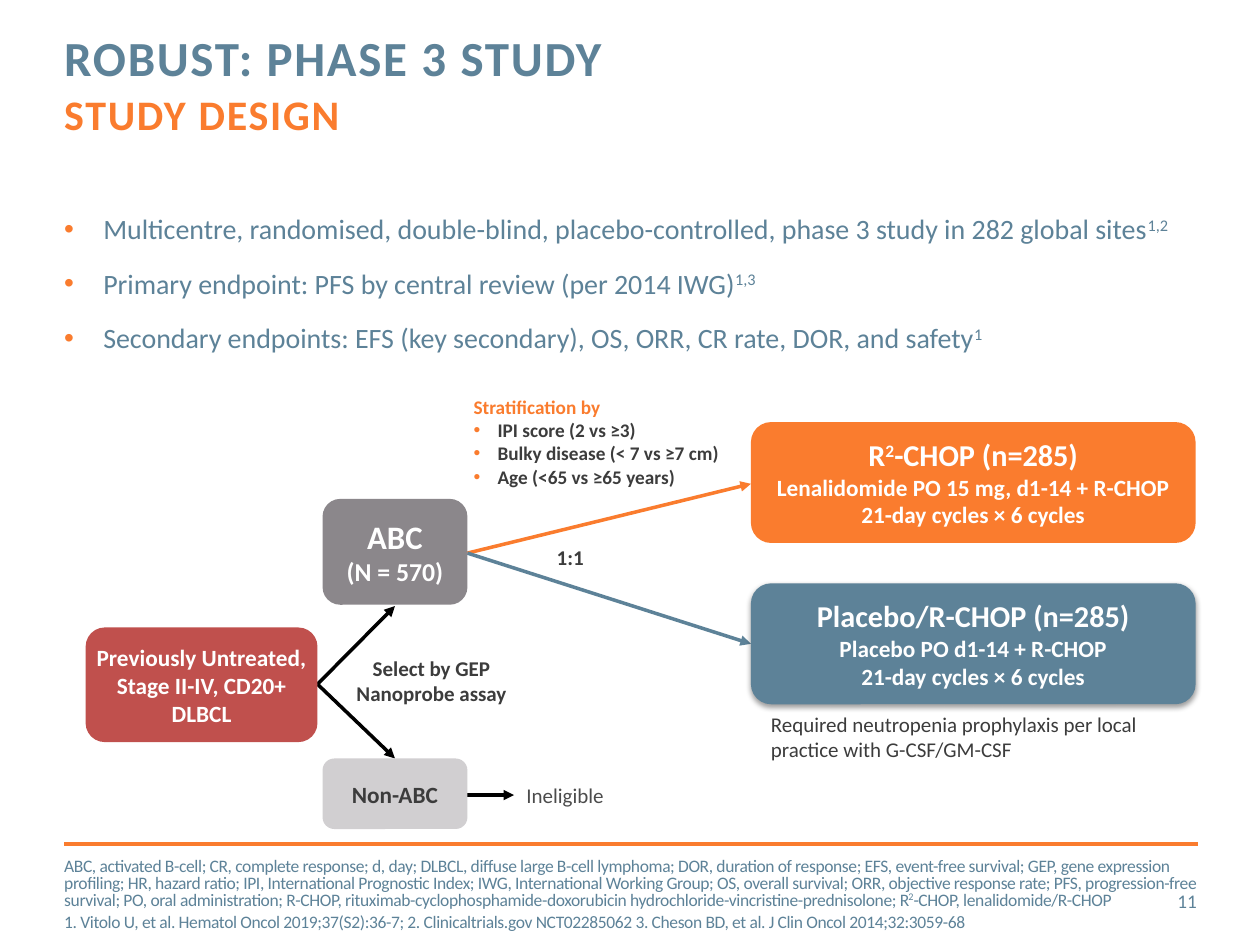
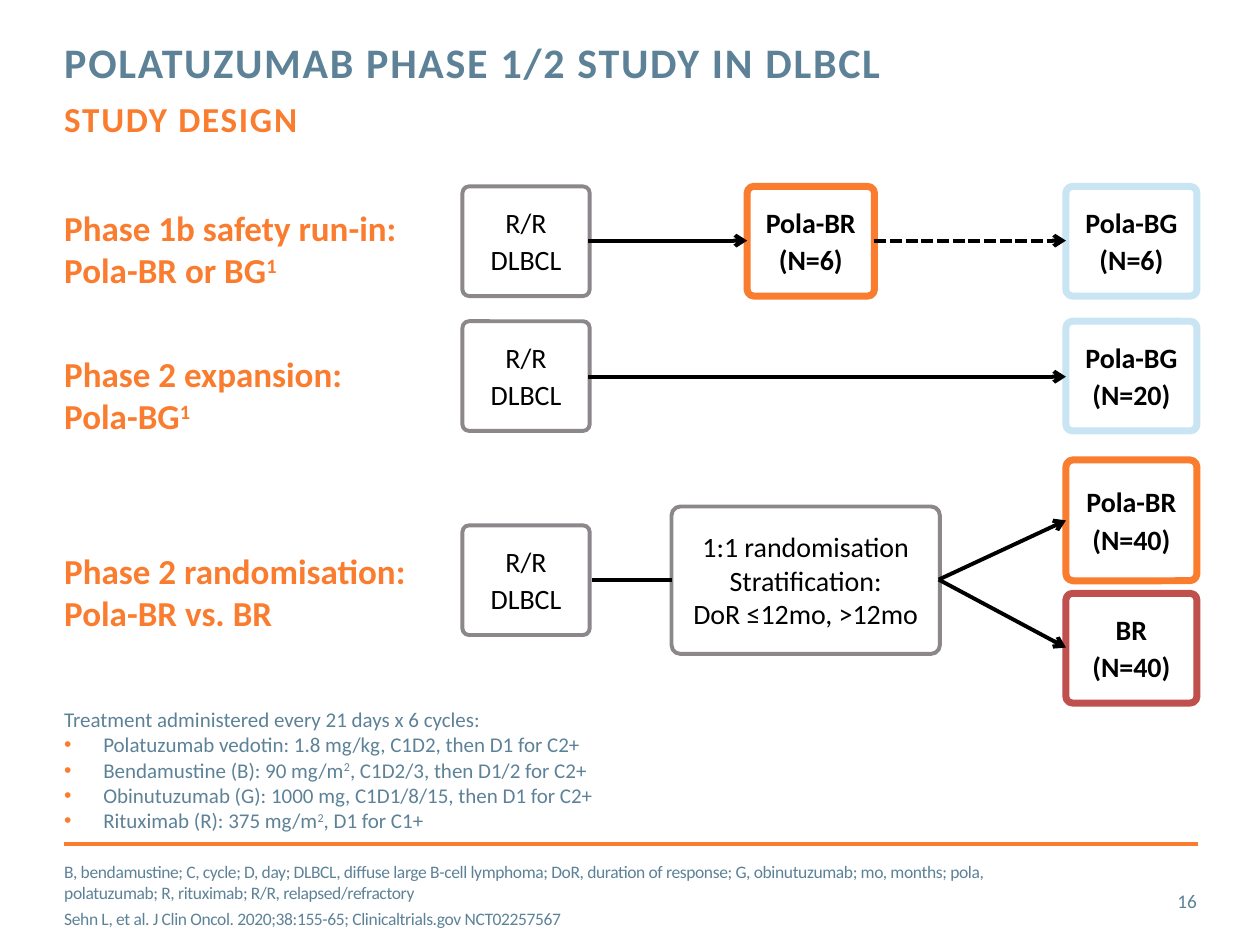
from lxml import etree
from pptx import Presentation
from pptx import util as u
from pptx.dml.color import RGBColor
from pptx.enum import dml, shapes, text
from pptx.oxml.ns import qn

HUE = {"blue": "5D8298", "orange": "FA7C2E", "red": "C0504D", "grey": "8B878B",
       "pale": "D1CFD1", "sky": "C9E5F3", "dark": "3C3C3C", "mid": "4C4C4C",
       "white": "FFFFFF", "black": "000000"}
LEFT, MID, RIGHT = text.PP_ALIGN.LEFT, text.PP_ALIGN.CENTER, text.PP_ALIGN.RIGHT
TOP, HALF = text.MSO_ANCHOR.TOP, text.MSO_ANCHOR.MIDDLE
EDGE, END = 0.51, 9.5      # left and right margins
WIDE = END - EDGE
INSET = (0.1, 0.05, 0.1, 0.05)
NONE = (0, 0, 0, 0)


def put(page, at, paras, size, hue, bold=False, align=LEFT, anchor=TOP, ins=INSET,
        wrap=True, before=0, lead=None, track=0, indent=0, fill=None, edge=None,
        thick=4, bend=None, title=False):
    """Place text; a paragraph is a string or (string, size, hue, bullet), ^ marks superscript."""
    at = [u.Inches(n) for n in at]
    if title:
        box = page.shapes.title
        box.left, box.top, box.width, box.height = at
    elif bend:
        box = page.shapes.add_shape(shapes.MSO_SHAPE.ROUNDED_RECTANGLE, *at)
        box.adjustments[0] = bend
        box.shadow.inherit = False
        box.fill.solid()
        box.fill.fore_color.rgb = RGBColor.from_string(HUE[fill])
        if edge:
            box.line.color.rgb = RGBColor.from_string(HUE[edge])
            box.line.width = u.Pt(thick)
        else:
            box.line.fill.background()
    else:
        box = page.shapes.add_textbox(*at)
    frame = box.text_frame
    frame.auto_size = text.MSO_AUTO_SIZE.NONE
    frame.word_wrap, frame.vertical_anchor = wrap, anchor
    (frame.margin_left, frame.margin_top,
     frame.margin_right, frame.margin_bottom) = [u.Inches(n) for n in ins]
    for i, item in enumerate(paras):
        words, pt, tint, dot = item if isinstance(item, tuple) else (item, size, hue, indent > 0)
        para = frame.add_paragraph() if i else frame.paragraphs[0]
        para.alignment = align
        if i and before:
            para.space_before = u.Pt(before)
        if lead:
            para.line_spacing = lead
        if dot:
            props = para._p.get_or_add_pPr()
            props.set("marL", str(u.Inches(indent)))
            props.set("indent", str(-u.Inches(indent)))
            tone = etree.SubElement(props, qn("a:buClr"))
            etree.SubElement(tone, qn("a:srgbClr"), val=HUE["orange"])
            etree.SubElement(props, qn("a:buFont"), typeface="Arial")
            etree.SubElement(props, qn("a:buChar"), char="•")
        font = para.font
        font.name, font.size, font.bold = "Calibri", u.Pt(pt), bold
        font.color.rgb = RGBColor.from_string(HUE[tint])
        if track:
            font._element.set("spc", str(int(track * 100)))
        for j, part in enumerate(words.split("^")):
            for k, line in enumerate(part.split("\n")):
                if k:
                    para.add_line_break()
                run = para.add_run()
                run.text = line
                if j % 2:
                    run._r.get_or_add_rPr().set("baseline", "30000")
    return box


def link(page, start, end, hue="black", thick=2.0, head=None):
    line = page.shapes.add_connector(shapes.MSO_CONNECTOR.STRAIGHT,
                                     *[u.Inches(n) for n in (*start, *end)])
    line.line.color.rgb = RGBColor.from_string(HUE[hue])
    line.line.width = u.Pt(thick)
    if head:
        etree.SubElement(line.line._get_or_add_ln(), qn("a:tailEnd"), type=head)
    etree.SubElement(line._element.spPr, qn("a:effectLst"))
    return line


deck = Presentation()
deck.slide_width, deck.slide_height = u.Inches(10), u.Inches(7.5)

# Shared frame: title, rule, slide number, references
heads = [
    ("ROBUST: PHASE 3 STUDY", 28, "11", WIDE, 0.8, [
        "ABC, activated B-cell; CR, complete response; d, day; DLBCL, diffuse large B-cell "
        "lymphoma; DOR, duration of response; EFS, event-free survival; GEP, gene expression "
        "profiling; HR, hazard ratio; IPI, International Prognostic Index; IWG, International "
        "Working Group; OS, overall survival; ORR, objective response rate; PFS, "
        "progression-free survival; PO, oral administration; R-CHOP, "
        "rituximab-cyclophosphamide-doxorubicin hydrochloride-vincristine-prednisolone; "
        "R^2^-CHOP, lenalidomide/R-CHOP",
        "1. Vitolo U, et al. Hematol Oncol 2019;37(S2):36-7; 2. Clinicaltrials.gov "
        "NCT02285062 3. Cheson BD, et al. J Clin Oncol 2014;32:3059-68"]),
    ("POLATUZUMAB PHASE 1/2 STUDY IN DLBCL", 24, "16", 7.68, None, [
        "B, bendamustine; C, cycle; D, day; DLBCL, diffuse large B-cell lymphoma; DoR, "
        "duration of response; G, obinutuzumab; mo, months; pola, polatuzumab; R, rituximab; "
        "R/R, relapsed/refractory",
        "Sehn L, et al. J Clin Oncol. 2020;38:155-65; Clinicaltrials.gov NCT02257567"]),
]
pages = []
for name, size, num, wide, lead, refs in heads:
    page = deck.slides.add_slide(deck.slide_layouts[5])
    pages.append(page)
    put(page, (EDGE, 0.27, WIDE, 0.88),
        [(name, size, "blue", False), ("STUDY DESIGN", size - 4, "orange", False)],
        size, "blue", bold=True, ins=NONE, lead=u.Pt(30), track=1, title=True)
    link(page, (EDGE, 6.7), (9.51, 6.7), "orange")
    put(page, (8.86, 6.95, 0.64, 0.4), [num], 11, "blue", align=RIGHT, anchor=HALF, ins=NONE)
    put(page, (EDGE, 6.8, wide, 0.61), refs, 10, "blue", anchor=HALF, ins=NONE,
        before=3, lead=lead, track=-0.2)
trial, pola = pages

# Slide 1: key facts
put(trial, (EDGE, 1.68, WIDE, 1.22), [
    "Multicentre, randomised, double-blind, placebo-controlled, phase 3 study in 282 "
    "global sites^1,2^",
    "Primary endpoint: PFS by central review (per 2014 IWG)^1,3^",
    "Secondary endpoints: EFS (key secondary), OS, ORR, CR rate, DOR, and safety^1^"],
    16, "blue", ins=NONE, before=12, indent=0.31)

# Slide 1: columns of the flow, then its arrows
pool, poolend, cell, cellend, arm = 0.68, 2.52, 2.56, 3.71, 5.96
stem = (cell + cellend) / 2
for start, end, hue in [
        ((cellend, 4.39), (arm, 3.84), "orange"),
        ((cellend, 4.39), (arm, 5.11), "blue"),
        ((poolend, 5.43), (stem, 4.81), "black"),
        ((poolend, 5.43), (stem, 6.02), "black"),
        ((cellend, 6.31), (4.08, 6.31), "black")]:
    link(trial, start, end, hue, head="triangle")

# Slide 1: flow boxes
flow = [
    (pool, 4.98, poolend - pool, 0.91, "red", "white",
     ["Previously Untreated,\nStage II-IV, CD20+", "DLBCL"]),
    (cell, 3.96, cellend - cell, 0.84, "grey", "white",
     [("ABC", 18.7, "white", False), ("(N = 570)", 14.7, "white", False)]),
    (cell, 6.02, cellend - cell, 0.56, "pale", "dark", ["Non-ABC"]),
    (arm, 3.35, 3.53, 0.96, "orange", "white",
     [("R^2^-CHOP (n=285)", 17.3, "white", False),
      "Lenalidomide PO 15 mg, d1-14 + R-CHOP\n21-day cycles × 6 cycles"]),
    (arm, 4.63, 3.53, 0.96, "blue", "white",
     [("Placebo/R-CHOP (n=285)", 17.3, "white", False),
      "Placebo PO d1-14 + R-CHOP\n21-day cycles × 6 cycles"]),
]
for x, y, w, h, fill, hue, paras in flow:
    box = put(trial, (x, y, w, h), paras, 13.3, hue, bold=True, align=MID, anchor=HALF,
              wrap=False, fill=fill, bend=0.167)

# Soft shadow under the placebo arm, the last box
glow = etree.SubElement(box._element.spPr.find(qn("a:effectLst")), qn("a:outerShdw"),
                        blurRad=str(u.Pt(3.1)), dist=str(u.Pt(1.6)), dir="5400000",
                        rotWithShape="0")
tone = etree.SubElement(glow, qn("a:srgbClr"), val=HUE["black"])
etree.SubElement(tone, qn("a:alpha"), val="38000")

# Slide 1: labels
for at, words, hue, bold, align in [
        ((2.65, 5.15, 1.55, 0.5), "Select by GEP\nNanoprobe assay", "dark", True, MID),
        ((4.27, 4.27, 0.51, 0.29), "1:1", "dark", True, MID),
        ((4.08, 6.16, 1.3, 0.29), "Ineligible", "mid", False, LEFT),
        ((6.02, 5.6, 3.48, 0.49),
         "Required neutropenia prophylaxis per local\npractice with G-CSF/GM-CSF",
         "dark", False, LEFT)]:
    put(trial, at, [words], 12, hue, bold=bold, align=align)
put(trial, (3.66, 3.09, 2.29, 0.84),
    [("Stratification by", 11, "orange", False), "IPI score (2 vs ≥3)",
     "Bulky disease (< 7 vs ≥7 cm)", "Age (<65 vs ≥65 years)"],
    11, "dark", bold=True, indent=0.19)

# Slide 2: phases and their starting boxes
start, split, last = 3.67, 5.93, 8.46
tall = 0.87
for y, row, words in [
        (1.59, 1.48, "Phase 1b safety run-in:\nPola-BR or BG^1^"),
        (2.75, 2.55, "Phase 2 expansion:\nPola-BG^1^"),
        (4.31, 4.17, "Phase 2 randomisation:\nPola-BR vs. BR")]:
    put(pola, (EDGE, y, 2.94, 0.77), [words], 20, "orange", bold=True,
        ins=(0, 0.05, 0.1, 0.05), wrap=False)
    put(pola, (start, row, 1.01, tall), ["R/R", "DLBCL"], 16, "black", align=MID,
        anchor=HALF, before=2, fill="white", edge="grey", thick=2.25, bend=0.06)
put(pola, (5.33, 4.02, 2.13, 1.17), ["1:1 randomisation Stratification:\nDoR ≤12mo, >12mo"],
    16, "black", align=MID, anchor=HALF, fill="white", edge="grey", thick=2.25, bend=0.06)

# Slide 2: treatment arms
for x, y, w, h, edge, name, size in [
        (split, 1.48, 1.01, tall, "orange", "Pola-BR", 6),
        (last, 1.48, 1.04, tall, "sky", "Pola-BG", 6),
        (last, 2.55, 1.04, tall, "sky", "Pola-BG", 20),
        (last, 3.65, 1.04, 0.96, "orange", "Pola-BR", 40),
        (last, 4.71, 1.04, tall, "red", "BR", 40)]:
    put(pola, (x, y, w, h), [name, f"(N={size})"], 16, "black", bold=True, align=MID,
        anchor=HALF, before=2, fill="white", edge=edge, bend=0.06)

# Slide 2: arrows
for x, y, tox, toy, head in [
        (4.67, 1.91, split, 1.91, "arrow"), (4.67, 2.99, last, 2.99, "arrow"),
        (4.7, 4.6, 5.33, 4.6, None), (7.45, 4.6, last, 4.13, "arrow"),
        (7.45, 4.6, last, 5.14, "arrow")]:
    link(pola, (x, y), (tox, toy), thick=2.25, head=head)
dash = link(pola, (6.94, 1.91), (last, 1.91), thick=2.25, head="arrow")
dash.line.dash_style = dml.MSO_LINE.SQUARE_DOT

# Slide 2: dosing
put(pola, (EDGE, 5.61, WIDE, 1.06), [
    ("Treatment administered every 21 days x 6 cycles:", 12, "blue", False),
    "Polatuzumab vedotin: 1.8 mg/kg, C1D2, then D1 for C2+",
    "Bendamustine (B): 90 mg/m^2^, C1D2/3, then D1/2 for C2+",
    "Obinutuzumab (G): 1000 mg, C1D1/8/15, then D1 for C2+",
    "Rituximab (R): 375 mg/m^2^, D1 for C1+"],
    12, "blue", ins=NONE, indent=0.31)

deck.save("out.pptx")
